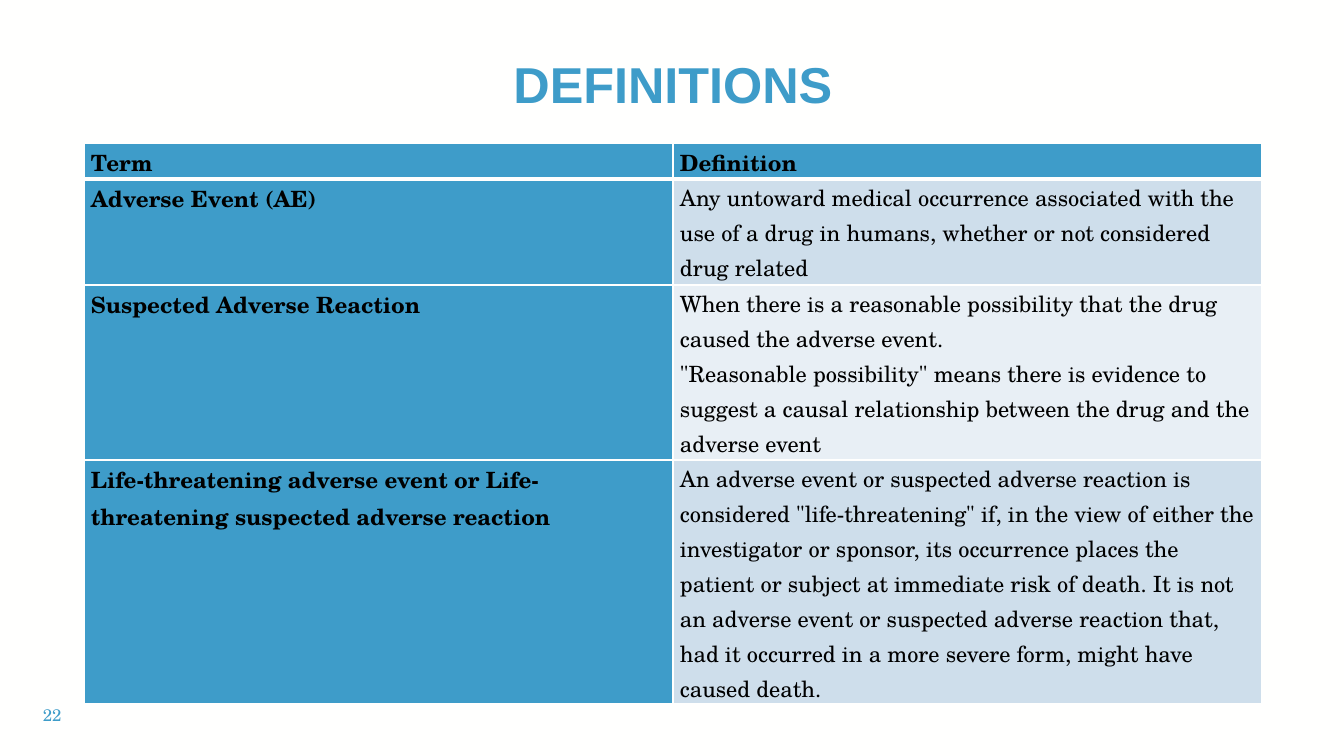
from lxml import etree
from pptx import Presentation, util as u
from pptx.dml.color import RGBColor
from pptx.enum import text
from pptx.oxml import ns

PX = 914400 / 100.8
BLUE = RGBColor(0x3E, 0x9C, 0xC9)
PALE = RGBColor(0xCE, 0xDE, 0xEB)
PALER = RGBColor(0xE8, 0xEF, 0xF5)
BLACK = RGBColor(0, 0, 0)
PAPER = RGBColor(0xFF, 0xFF, 0xFE)
SERIF = "TeX Gyre Schola"

HEADER = ("Term", "Definition")
DEFINITIONS = [
    ("Adverse Event (AE)",
     "Any untoward medical occurrence associated with the use of a drug in humans, "
     "whether or not considered drug related"),
    ("Suspected Adverse Reaction",
     "When there is a reasonable possibility that the drug caused the adverse event.\n"
     "\"Reasonable possibility\" means there is evidence to suggest a causal "
     "relationship between the drug and the adverse event"),
    ("Life-threatening adverse event or Life-threatening suspected adverse reaction",
     "An adverse event or suspected adverse reaction is considered \"life-threatening\" "
     "if, in the view of either the investigator or sponsor, its occurrence places the "
     "patient or subject at immediate risk of death. It is not an adverse event or "
     "suspected adverse reaction that, had it occurred in a more severe form, might "
     "have caused death."),
]
ROW_HEIGHTS = (36, 106, 175, 244)


def px(length):
    return u.Emu(round(length * PX))


def set_font(paragraph, name, size, color, bold=False):
    font = paragraph.font
    font.name, font.size, font.bold = name, u.Pt(size), bold
    font.color.rgb = color


def add_title(slide, left, top, width, height):
    title = slide.shapes.title
    title.left, title.top, title.width, title.height = map(px, (left, top, width, height))
    frame = title.text_frame
    frame.text = "DEFINITIONS"
    frame.vertical_anchor = text.MSO_ANCHOR.MIDDLE
    heading = frame.paragraphs[0]
    heading.alignment = text.PP_ALIGN.CENTER
    heading.line_spacing = 0.9
    set_font(heading, "Arial", 36, BLUE, bold=True)


def add_page_number(slide, left, top, width, height):
    frame = slide.shapes.add_textbox(*map(px, (left, top, width, height))).text_frame
    frame.word_wrap = True
    frame.vertical_anchor = text.MSO_ANCHOR.MIDDLE
    frame.text = "22"
    set_font(frame.paragraphs[0], SERIF, 12, BLUE)


def add_borders(cell, top, bottom):
    """Draw the cell's four edges; top and bottom are widths in points."""
    properties = cell._tc.get_or_add_tcPr()
    for side, width in (("L", 1), ("R", 1), ("T", top), ("B", bottom)):
        line = etree.SubElement(properties, ns.qn(f"a:ln{side}"), w=str(u.Pt(width)))
        fill = etree.SubElement(line, ns.qn("a:solidFill"))
        etree.SubElement(fill, ns.qn("a:srgbClr"), val=str(PAPER))


def fill_cell(cell, wording, row, column):
    add_borders(cell, top=3 if row == 1 else 1, bottom=3 if row == 0 else 1)
    is_label = row == 0 or column == 0
    cell.fill.solid()
    cell.fill.fore_color.rgb = BLUE if is_label else PALE if row % 2 else PALER
    cell.margin_left = cell.margin_right = px(7)
    cell.margin_top = cell.margin_bottom = 0
    cell.text = wording
    for paragraph in cell.text_frame.paragraphs:
        paragraph.line_spacing = 1.07
        set_font(paragraph, SERIF, 16, BLACK, bold=is_label)


def add_definitions(slide, left, top, width):
    rows = [HEADER, *DEFINITIONS]
    box = map(px, (left, top, width, sum(ROW_HEIGHTS)))
    table = slide.shapes.add_table(len(rows), len(HEADER), *box).table
    for row, (wordings, height) in enumerate(zip(rows, ROW_HEIGHTS)):
        table.rows[row].height = px(height)
        for column, wording in enumerate(wordings):
            fill_cell(table.cell(row, column), wording, row, column)


def main():
    deck = Presentation()
    deck.slide_width, deck.slide_height = px(1344), px(756)
    slide = deck.slides.add_slide(deck.slide_layouts[5])
    slide.background.fill.solid()
    slide.background.fill.fore_color.rgb = PAPER
    add_page_number(slide, 33, 695, 50, 40)
    add_title(slide, 84, 32, 1178, 111)
    add_definitions(slide, 84, 143, 1178)
    deck.save("out.pptx")


if __name__ == "__main__":
    main()
